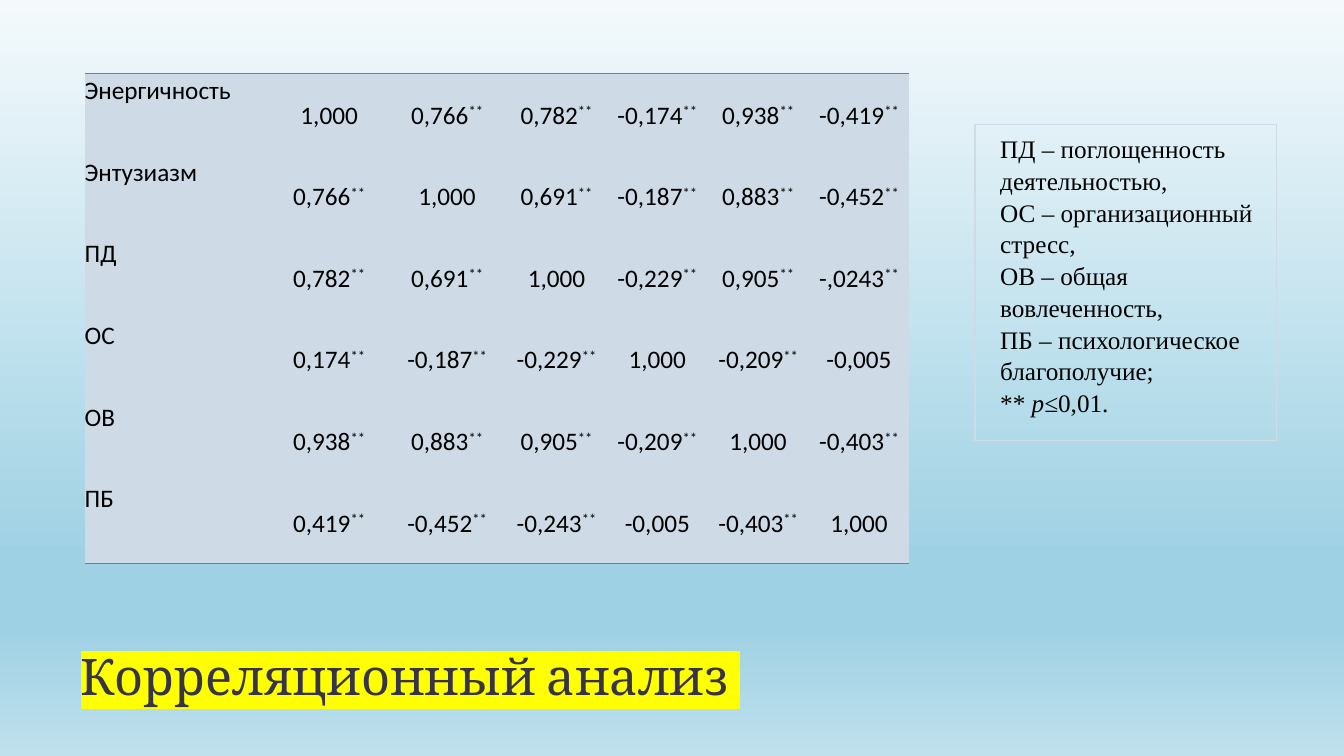
from copy import deepcopy

from lxml.etree import SubElement
from pptx import Presentation
from pptx.dml.color import RGBColor
from pptx.enum.shapes import MSO_SHAPE
from pptx.enum.text import MSO_ANCHOR, MSO_AUTO_SIZE, PP_ALIGN
from pptx.oxml import parse_xml
from pptx.oxml.ns import nsdecls, qn
from pptx.util import Inches, Pt

BLACK = RGBColor(0x00, 0x00, 0x00)
TITLE_COLOR = RGBColor(0x37, 0x35, 0x45)
HIGHLIGHT = RGBColor(0xFF, 0xFF, 0x00)
PALE = RGBColor(0xCE, 0xDB, 0xE6)
TEAL = RGBColor(0x34, 0x94, 0xBA)
SKY = [
    (0, RGBColor(0xF4, 0xFA, 0xFC)),
    (0.74, RGBColor(0x9F, 0xD1, 0xE4)),
    (0.83, RGBColor(0x9F, 0xD1, 0xE4)),
    (1, RGBColor(0xBF, 0xE0, 0xED)),
]

NO_STYLE = "{2D5ABB26-0587-4C30-8999-92F81FD0307C}"
COL_WIDTHS = [1.84, 1.17, 1.17, 1, 1, 1, 1]
ROW_HEIGHT = 0.81
CORRELATIONS = [
    ["Энергичность", "1,000", "0,766**", "0,782**", "-0,174**", "0,938**", "-0,419**"],
    ["Энтузиазм", "0,766**", "1,000", "0,691**", "-0,187**", "0,883**", "-0,452**"],
    ["ПД", "0,782**", "0,691**", "1,000", "-0,229**", "0,905**", "-,0243**"],
    ["OC", "0,174**", "-0,187**", "-0,229**", "1,000", "-0,209**", "-0,005"],
    ["ОВ", "0,938**", "0,883**", "0,905**", "-0,209**", "1,000", "-0,403**"],
    ["ПБ", "0,419**", "-0,452**", "-0,243**", "-0,005", "-0,403**", "1,000"],
]
LEGEND = [
    ["ПД – поглощенность деятельностью,"],
    ["ОС – организационный стресс,"],
    ["ОВ – общая вовлеченность,"],
    ["ПБ – психологическое благополучие;"],
    ["** ", "p≤", "0,01."],
]


def add_run(p, text, font, size, color):
    r = p.add_run()
    r.text = text
    r.font.name = font
    r.font.size = Pt(size)
    r.font.color.rgb = color
    return r


def set_margins(box, left, top, right, bottom):
    box.margin_left, box.margin_top = Inches(left), Inches(top)
    box.margin_right, box.margin_bottom = Inches(right), Inches(bottom)


def paint_background(s):
    fill = s.background.fill
    fill.gradient()
    fill.gradient_angle = 270
    stops = s.background._cSld.find(".//" + qn("a:gsLst"))
    while len(stops) < len(SKY):
        stops.append(deepcopy(stops[-1]))
    for stop, (position, color) in zip(fill.gradient_stops, SKY):
        stop.position = position
        stop.color.rgb = color


def add_title(s, text):
    title = s.shapes.title
    title.left, title.top = Inches(0.7), Inches(5.88)
    title.width, title.height = Inches(12), Inches(1.17)
    tf = title.text_frame
    tf.auto_size = MSO_AUTO_SIZE.NONE
    tf.vertical_anchor = MSO_ANCHOR.BOTTOM
    p = tf.paragraphs[0]
    p.alignment = PP_ALIGN.LEFT
    p.line_spacing = 0.8
    r = add_run(p, text, "Cambria", 36, TITLE_COLOR)
    highlight = parse_xml(
        f'<a:highlight {nsdecls("a")}><a:srgbClr val="{HIGHLIGHT}"/></a:highlight>')
    r.font._element.find(qn("a:solidFill")).addnext(highlight)


def add_border(cell, side):
    line = parse_xml(
        f'<a:{side} {nsdecls("a")} w="{Pt(1)}"><a:solidFill>'
        f'<a:srgbClr val="{TEAL}"/></a:solidFill></a:{side}>')
    cell._tc.get_or_add_tcPr().insert(0, line)


def fill_cell(cell, text, is_label):
    """Write a row label or a coefficient with raised significance stars."""
    cell.fill.solid()
    cell.fill.fore_color.rgb = PALE
    set_margins(cell, 0, 0, 0, 0)
    cell.vertical_anchor = MSO_ANCHOR.TOP if is_label else MSO_ANCHOR.MIDDLE
    p = cell.text_frame.paragraphs[0]
    p.alignment = PP_ALIGN.JUSTIFY if is_label else PP_ALIGN.CENTER
    p.line_spacing = 1.07
    p.space_after = Pt(8)
    value, stars, _ = text.partition("**")
    add_run(p, value, "Calibri", 18, BLACK)
    if stars:
        r = add_run(p, stars, "Calibri", 18, BLACK)
        r.font._element.set("baseline", "30000")


def add_correlation_table(s):
    rows, cols = len(CORRELATIONS), len(COL_WIDTHS)
    frame = s.shapes.add_table(
        rows, cols, Inches(0.84), Inches(0.73),
        Inches(sum(COL_WIDTHS)), Inches(rows * ROW_HEIGHT))
    table = frame.table
    table.first_row = table.horz_banding = False
    props = table._tbl.tblPr
    style = props.find(qn("a:tableStyleId"))
    if style is None:
        style = SubElement(props, qn("a:tableStyleId"))
    style.text = NO_STYLE
    for column, width in zip(table.columns, COL_WIDTHS):
        column.width = Inches(width)
    for i, values in enumerate(CORRELATIONS):
        table.rows[i].height = Inches(ROW_HEIGHT)
        for j, text in enumerate(values):
            fill_cell(table.cell(i, j), text, is_label=j == 0)
    for j in range(cols):
        add_border(table.cell(0, j), "lnT")
        add_border(table.cell(rows - 1, j), "lnB")


def add_legend(s):
    sp = s.shapes.add_shape(
        MSO_SHAPE.RECTANGLE, Inches(9.67), Inches(1.24), Inches(2.99), Inches(3.13))
    sp.shadow.inherit = False
    sp.fill.background()
    sp.line.color.rgb = PALE
    sp.line.width = Pt(0.75)
    tf = sp.text_frame
    tf.word_wrap = True
    tf.vertical_anchor = MSO_ANCHOR.TOP
    set_margins(tf, 0.25, 0.07, 0.1, 0.05)
    for i, parts in enumerate(LEGEND):
        p = tf.paragraphs[0] if i == 0 else tf.add_paragraph()
        p.alignment = PP_ALIGN.LEFT
        p.line_spacing = 1.05
        for part in parts:
            r = add_run(p, part, "Times New Roman", 18, BLACK)
            r.font.italic = part == "p≤"


def main():
    prs = Presentation()
    prs.slide_width, prs.slide_height = Inches(13.33), Inches(7.5)
    s = prs.slides.add_slide(prs.slide_layouts[5])
    paint_background(s)
    add_title(s, "Корреляционный анализ ")
    add_correlation_table(s)
    add_legend(s)
    prs.save("out.pptx")


if __name__ == "__main__":
    main()
